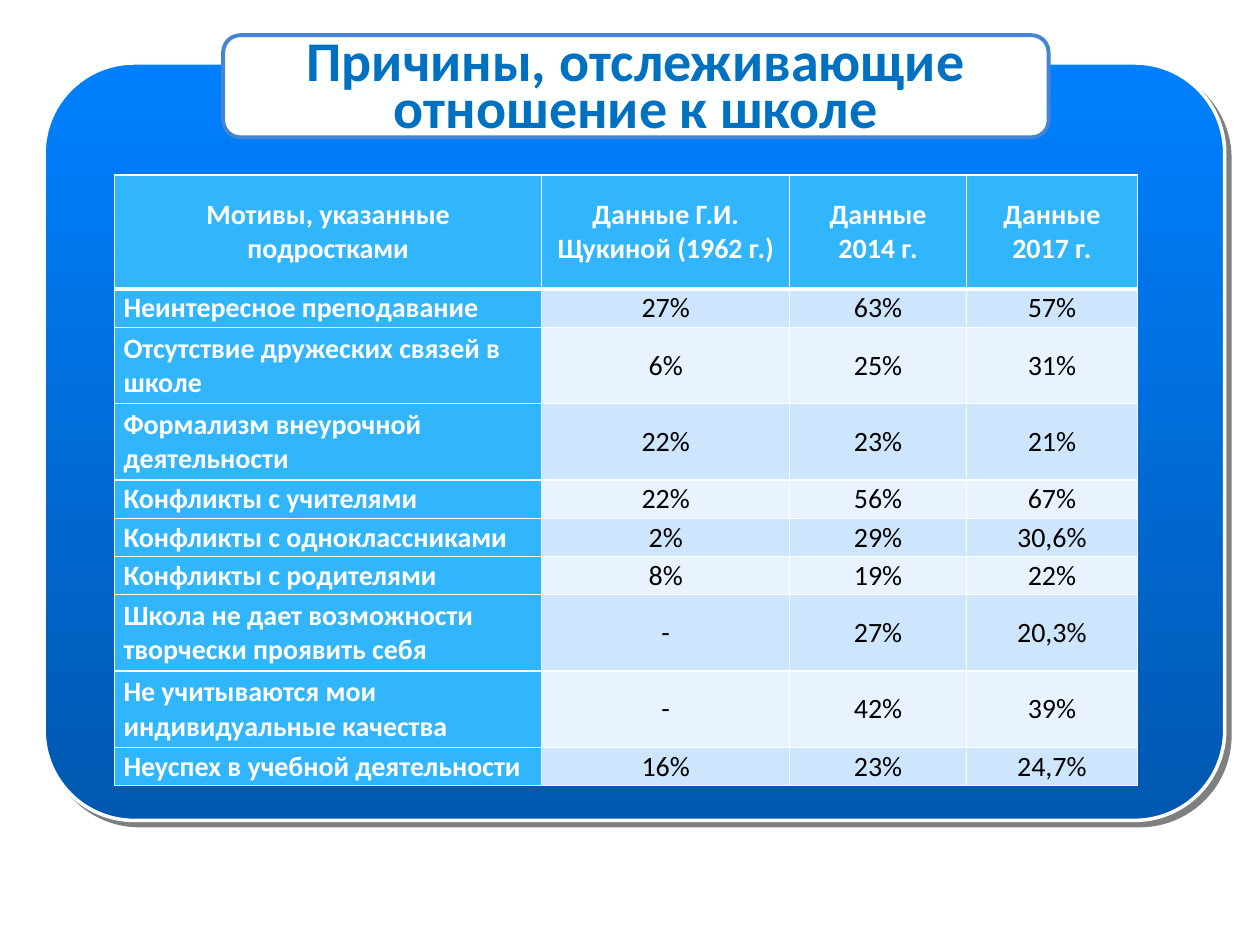
from dataclasses import dataclass

import lxml.etree
import pptx
import pptx.dml.color
import pptx.enum.shapes
import pptx.enum.text
import pptx.oxml
import pptx.oxml.ns
import pptx.util
from pptx.util import Cm, Pt

FONT = "Calibri"
WHITE = "FFFFFF"
ACCENT = "31B6FD"
BANDS = ("CEE5FE", "E8F3FF")
HEADER_HEIGHT = 2.3
LINE_HEIGHT = 0.77
COLUMN_WIDTHS = (8.61, 5.0, 3.56, 3.45)
HEADINGS = (
    "Мотивы, указанные подростками",
    "Данные Г.И. Щукиной (1962 г.)",
    "Данные 2014 г.",
    "Данные 2017 г.",
)


@dataclass
class Reason:
    motive: str
    shares: tuple[str, str, str]
    lines: int = 1


REASONS = (
    Reason("Неинтересное преподавание", ("27%", "63%", "57%")),
    Reason("Отсутствие дружеских связей в школе", ("6%", "25%", "31%"), 2),
    Reason("Формализм внеурочной деятельности", ("22%", "23%", "21%"), 2),
    Reason("Конфликты с учителями", ("22%", "56%", "67%")),
    Reason("Конфликты с одноклассниками", ("2%", "29%", "30,6%")),
    Reason("Конфликты с родителями", ("8%", "19%", "22%")),
    Reason("Школа не дает возможности творчески проявить себя", ("-", "27%", "20,3%"), 2),
    Reason("Не учитываются мои индивидуальные качества", ("-", "42%", "39%"), 2),
    Reason("Неуспех в учебной деятельности", ("16%", "23%", "24,7%")),
)


def rgb(value: str) -> pptx.dml.color.RGBColor:
    return pptx.dml.color.RGBColor.from_string(value)


def style_paragraph(paragraph, size: float, color: str, bold: bool, centred: bool) -> None:
    align = pptx.enum.text.PP_ALIGN
    paragraph.alignment = align.CENTER if centred else align.LEFT
    paragraph.font.name = FONT
    paragraph.font.size = Pt(size)
    paragraph.font.bold = bold
    paragraph.font.color.rgb = rgb(color)


def add_rounded_box(page, left: float, top: float, width: float, height: float,
                    rounding: float, line_color: str, line_width: float):
    box = page.shapes.add_shape(
        pptx.enum.shapes.MSO_SHAPE.ROUNDED_RECTANGLE,
        Cm(left), Cm(top), Cm(width), Cm(height))
    box.adjustments[0] = rounding
    box.line.color.rgb = rgb(line_color)
    box.line.width = Pt(line_width)
    box.shadow.inherit = False
    return box


def add_panel(page) -> None:
    """Draw the blue gradient panel with its hard grey shadow."""
    panel = add_rounded_box(page, 0.89, 1.27, 23.8, 15.27, 0.119, "FEFFFF", 2)
    panel.fill.gradient()
    panel.fill.gradient_angle = 270
    for stop, color, position in zip(panel.fill.gradient_stops, ("0080FF", "0058B0"), (0, 1)):
        stop.color.rgb = rgb(color)
        stop.position = position
    effects = panel._element.spPr.find(pptx.oxml.ns.qn("a:effectLst"))
    effects.append(pptx.oxml.parse_xml(
        f'<a:outerShdw {pptx.oxml.ns.nsdecls("a")} blurRad="0" dist="{Pt(4.2)}" '
        'dir="2700000" algn="ctr" rotWithShape="0">'
        '<a:srgbClr val="000000"><a:alpha val="50000"/></a:srgbClr></a:outerShdw>'))


def add_title(page) -> None:
    frame = add_rounded_box(page, 4.5, 0.71, 16.64, 2.06, 0.167, "4584D3", 2.25)
    frame.fill.solid()
    frame.fill.fore_color.rgb = rgb("FEFFFF")

    title = page.shapes.title
    title.left, title.top, title.width, title.height = Cm(4.5), Cm(0.76), Cm(16.64), Cm(2.24)
    page.shapes._spTree.append(title._element)  # bring in front of the frame
    title.text_frame.text = "Причины, отслеживающие отношение к школе"
    title.text_frame.word_wrap = True
    title.text_frame.auto_size = pptx.enum.text.MSO_AUTO_SIZE.SHAPE_TO_FIT_TEXT
    title.text_frame.vertical_anchor = pptx.enum.text.MSO_ANCHOR.TOP
    paragraph = title.text_frame.paragraphs[0]
    paragraph.line_spacing = 0.7
    style_paragraph(paragraph, 32, "0070C0", True, True)


def set_borders(cell, top: float, bottom: float) -> None:
    properties = cell._tc.get_or_add_tcPr()
    widths = {"lnL": 1, "lnR": 1, "lnT": top, "lnB": bottom}
    for index, (side, width) in enumerate(widths.items()):
        properties.insert(index, pptx.oxml.parse_xml(
            f'<a:{side} {pptx.oxml.ns.nsdecls("a")} w="{Pt(width)}">'
            f'<a:solidFill><a:srgbClr val="{WHITE}"/></a:solidFill></a:{side}>'))


def fill_cell(cell, text: str, row: int, column: int) -> None:
    accented = row == 0 or column == 0
    cell.text = text
    cell.vertical_anchor = pptx.enum.text.MSO_ANCHOR.MIDDLE
    cell.margin_left = cell.margin_right = Cm(0.18)
    cell.margin_top = cell.margin_bottom = 0
    cell.fill.solid()
    cell.fill.fore_color.rgb = rgb(ACCENT if accented else BANDS[(row - 1) % 2])
    set_borders(cell, top=3 if row == 1 else 1, bottom=3 if row == 0 else 1)
    style_paragraph(cell.text_frame.paragraphs[0], 16, WHITE if accented else "000000",
                    accented, row == 0 or column > 0)


def add_reasons_table(page) -> None:
    heights = [HEADER_HEIGHT] + [reason.lines * LINE_HEIGHT for reason in REASONS]
    rows = [HEADINGS] + [(reason.motive, *reason.shares) for reason in REASONS]
    table = page.shapes.add_table(
        len(rows), len(HEADINGS), Cm(2.31), Cm(3.53),
        Cm(sum(COLUMN_WIDTHS)), Cm(sum(heights))).table
    for column, width in zip(table.columns, COLUMN_WIDTHS):
        column.width = Cm(width)
    for row, height in zip(table.rows, heights):
        row.height = Cm(height)
    for row, texts in enumerate(rows):
        for column, text in enumerate(texts):
            fill_cell(table.cell(row, column), text, row, column)


def main() -> None:
    deck = pptx.Presentation()
    deck.slide_width, deck.slide_height = Cm(25.4), Cm(19.05)
    page = deck.slides.add_slide(deck.slide_layouts[5])
    add_panel(page)
    add_title(page)
    add_reasons_table(page)
    deck.save("out.pptx")


if __name__ == "__main__":
    main()
